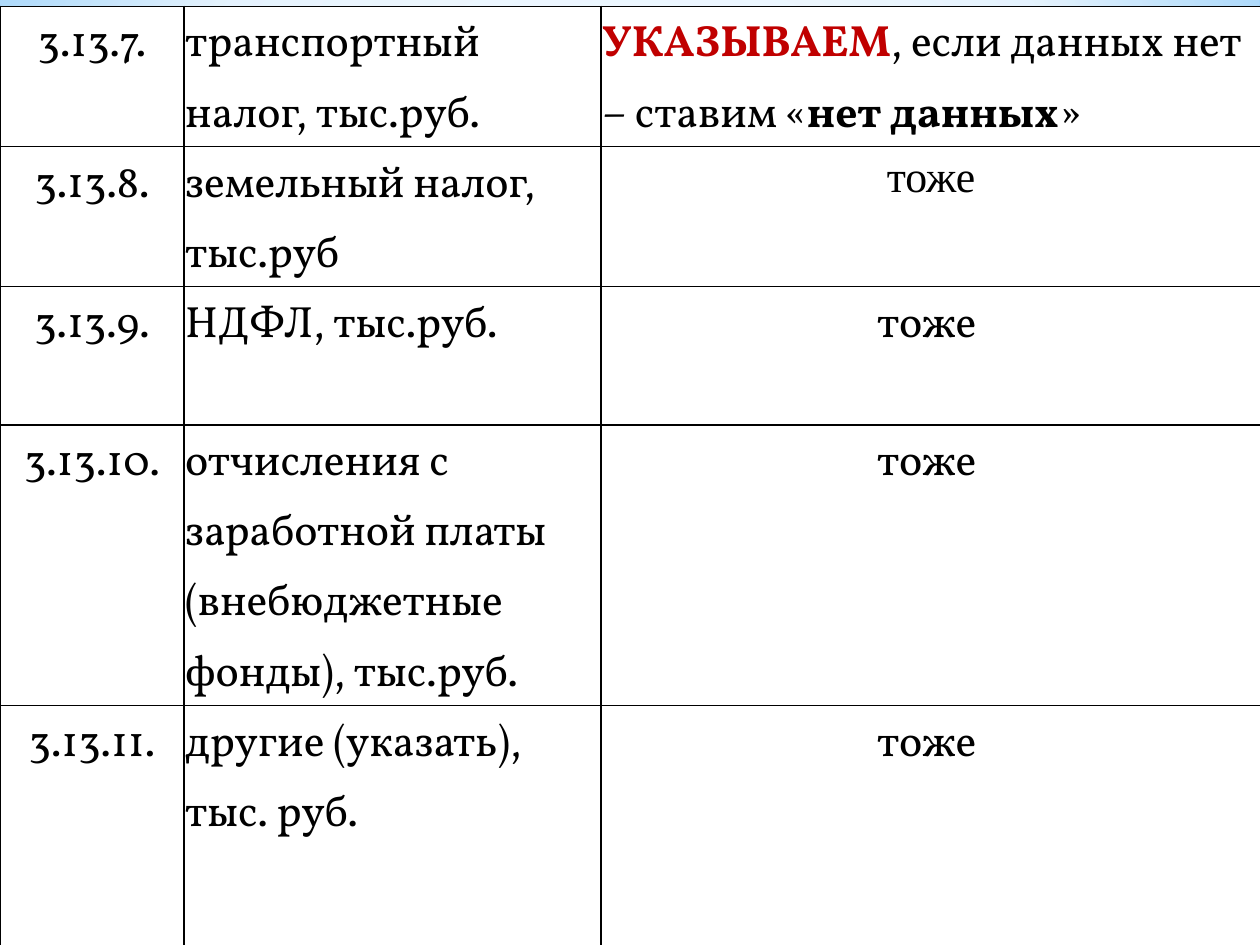
from dataclasses import dataclass

from pptx import Presentation
from pptx.dml.color import RGBColor
from pptx.enum.shapes import MSO_SHAPE
from pptx.enum.text import PP_ALIGN
from pptx.oxml import parse_xml
from pptx.oxml.ns import nsdecls, qn
from pptx.util import Inches, Pt


@dataclass(frozen=True)
class Theme:
    ink: str = "000000"
    red: str = "C00000"
    paper: str = "FFFFFF"
    sky: str = "B4DCFA"
    glow: str = "9ED5FF"
    deep: str = "5BB9FF"
    face: str = "Vollkorn"
    plain: str = "Times New Roman"
    size: float = 25
    space: float = 1.15
    rule: float = 1


LOOK = Theme()
WIDE, HIGH = 10, 7.5
TOP = 0.05
COLS = [1.46, 3.31, 5.24]
SAME = [("тоже ", {})]

# Each row: height, number, tax, runs of the answer
ROWS = [
    (0.6, "3.13.7.", "транспортный налог, тыс.руб.", [
        ("УКАЗЫВАЕМ", {"color": LOOK.red, "bold": True}),
        (", если данных нет – ставим «", {}),
        ("нет данных", {"bold": True}),
        ("»", {})]),
    (1.1, "3.13.8.", "земельный налог, тыс.руб",
     [("тоже", {"face": LOOK.plain})]),
    (1.1, "3.13.9.", "НДФЛ, тыс.руб.", SAME),
    (1.87, "3.13.10.", "отчисления с заработной платы "
     "(внебюджетные фонды), тыс.руб.", SAME),
    (2.2, "3.13.11.", "другие (указать), тыс. руб.", SAME),
]


def write(par, text, face=LOOK.face, color=LOOK.ink, bold=False):
    run = par.add_run()
    run.text = text
    font = run.font
    font.name, font.size, font.bold = face, Pt(LOOK.size), bold
    font.color.rgb = RGBColor.from_string(color)


def blend(host, stops, focus):
    """Swap the solid fill of host for a round gradient."""
    marks = "".join(
        f'<a:gs pos="{at * 1000}"><a:srgbClr val="{color}">'
        f'<a:alpha val="{alpha * 1000}"/></a:srgbClr></a:gs>'
        for at, color, alpha in stops)
    sides = " ".join(f'{side}="{share * 1000}"'
                     for side, share in zip("ltrb", focus))
    fill = parse_xml(
        f'<a:gradFill {nsdecls("a")} rotWithShape="1"><a:gsLst>{marks}</a:gsLst>'
        f'<a:path path="circle"><a:fillToRect {sides}/></a:path></a:gradFill>')
    host.replace(host.find(qn("a:solidFill")), fill)


def backdrop(slide):
    slide.background.fill.solid()
    blend(slide.element.find(".//" + qn("p:bgPr")),
          [(0, LOOK.glow, 100), (60, LOOK.paper, 100), (100, LOOK.deep, 100)],
          (20, 10, 20, 60))


def veil(slide, height):
    shape = slide.shapes.add_shape(
        MSO_SHAPE.RECTANGLE, 0, 0, Inches(WIDE), Inches(height))
    shape.shadow.inherit = False
    shape.line.fill.background()
    shape.fill.solid()
    blend(shape.element.spPr,
          [(0, LOOK.paper, 89), (48, LOOK.paper, 62), (100, LOOK.sky, 79)],
          (50, 50, 50, 50))


def frame(cell):
    props = cell._tc.get_or_add_tcPr()
    for spot, side in enumerate("LRTB"):
        props.insert(spot, parse_xml(
            f'<a:ln{side} {nsdecls("a")} w="{Pt(LOOK.rule)}"><a:solidFill>'
            f'<a:srgbClr val="{LOOK.ink}"/></a:solidFill></a:ln{side}>'))


def fill_cell(cell, runs, align):
    cell.fill.solid()
    cell.fill.fore_color.rgb = RGBColor.from_string(LOOK.paper)
    cell.margin_left = cell.margin_right = Inches(0.01)
    cell.margin_top = cell.margin_bottom = 0
    frame(cell)
    par = cell.text_frame.paragraphs[0]
    par.alignment, par.line_spacing = align, LOOK.space
    for text, style in runs:
        write(par, text, **style)


def grid(slide):
    total = sum(row[0] for row in ROWS)
    table = slide.shapes.add_table(
        len(ROWS), len(COLS), 0, Inches(TOP), Inches(WIDE), Inches(total)).table
    table.first_row = table.horz_banding = False
    for col, width in zip(table.columns, COLS):
        col.width = Inches(width)
    for line, (height, code, tax, answer) in zip(table.rows, ROWS):
        line.height = Inches(height)
        last = PP_ALIGN.LEFT if len(answer) > 1 else PP_ALIGN.CENTER
        aligns = [PP_ALIGN.CENTER, PP_ALIGN.LEFT, last]
        parts = [[(code, {})], [(tax, {})], answer]
        for cell, runs, align in zip(line.cells, parts, aligns):
            fill_cell(cell, runs, align)


def main():
    deck = Presentation()
    deck.slide_width, deck.slide_height = Inches(WIDE), Inches(HIGH)
    slide = deck.slides.add_slide(deck.slide_layouts[6])
    # Soft blue ground, seen above the table
    backdrop(slide)
    veil(slide, 5.58)
    # Tax table
    grid(slide)
    deck.save("out.pptx")


if __name__ == "__main__":
    main()
